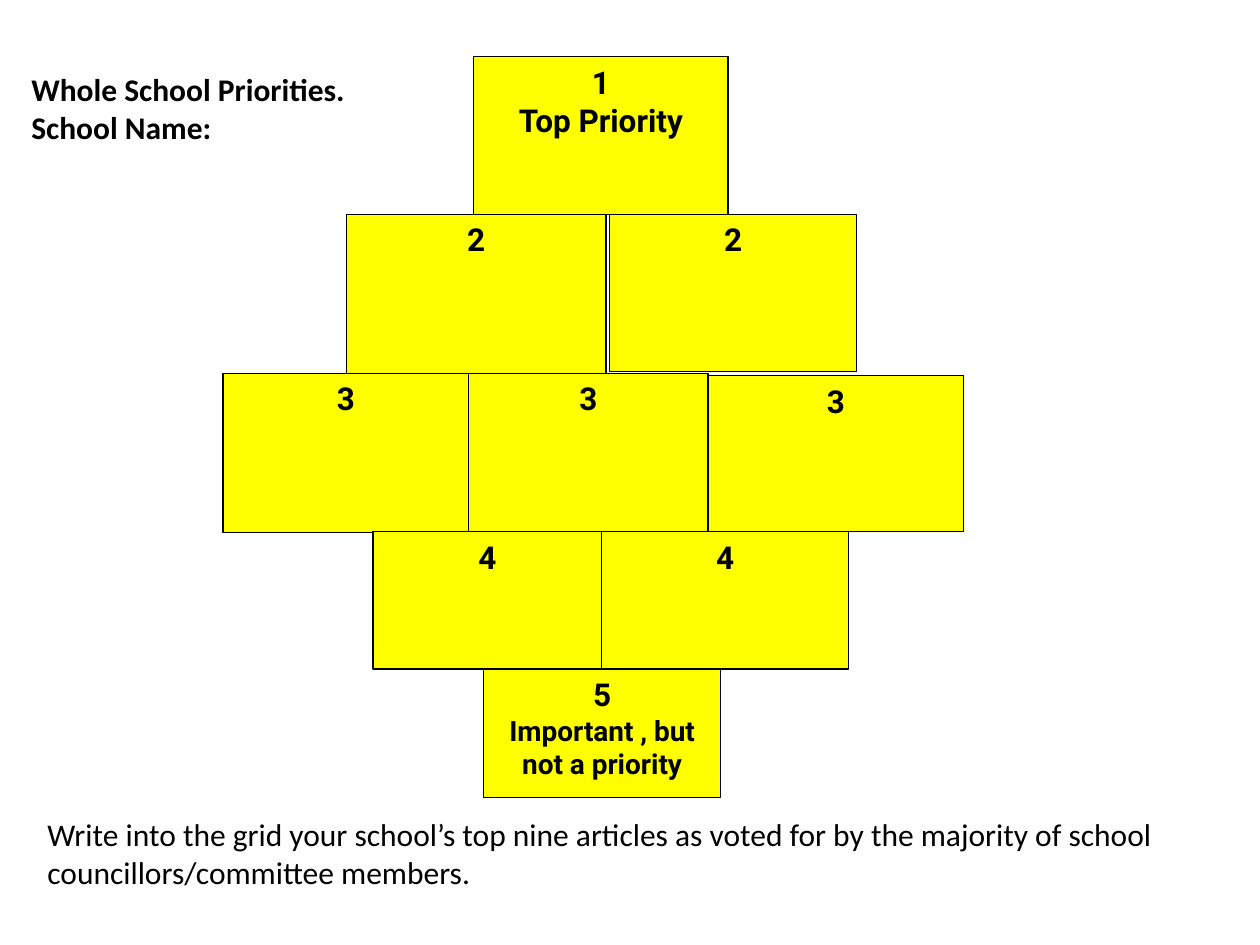
from dataclasses import dataclass

from pptx import Presentation
from pptx.dml.color import RGBColor
from pptx.enum import shapes, text
from pptx.util import Pt


@dataclass(frozen=True)
class Theme:
    ink: RGBColor = RGBColor(0, 0, 0)
    card: RGBColor = RGBColor(255, 255, 0)
    body_font: str = "Calibri"
    card_font: str = "Roboto"
    size: float = 18
    caption_size: float = 16
    outline: float = 0.75


THEME = Theme()

# Each rank: number, caption, caption size, cards as (left, top, width, height)
# measured from the corner of the diamond
RANKS = [
    ("1", "Top Priority", THEME.size, [(143.3, 0, 145.4, 90)]),
    ("2", None, None, [(70.6, 90, 148.3, 92.2), (221, 90, 141.1, 90)]),
    ("3", None, None, [(0, 180.9, 140.4, 91.2), (140.4, 180.9, 136.8, 90.5),
                       (277.2, 182.3, 146.2, 89.1)]),
    ("4", None, None, [(85.7, 271.4, 130.7, 78.5), (216.4, 271.4, 141.1, 78.5)]),
    ("5", "Important , but not a priority", THEME.caption_size,
     [(149, 349.9, 135.4, 73.4)]),
]


def write_lines(frame, lines, align, **font_format):
    """Write (wording, size) lines, one paragraph each."""
    for index, (wording, size) in enumerate(lines):
        paragraph = frame.paragraphs[0] if index == 0 else frame.add_paragraph()
        paragraph.alignment = align
        run = paragraph.add_run()
        run.text = wording
        run.font.color.rgb = THEME.ink
        for key, value in {"size": Pt(size), **font_format}.items():
            setattr(run.font, key, value)


def add_card(slide, box, lines):
    card = slide.shapes.add_shape(shapes.MSO_SHAPE.RECTANGLE, *map(Pt, box))
    card.shadow.inherit = False
    card.fill.solid()
    card.fill.fore_color.rgb = THEME.card
    card.line.color.rgb = THEME.ink
    card.line.width = Pt(THEME.outline)
    card.text_frame.word_wrap = True
    card.text_frame.vertical_anchor = text.MSO_ANCHOR.TOP
    write_lines(card.text_frame, lines, text.PP_ALIGN.CENTER,
                name=THEME.card_font, bold=True)


def add_diamond(slide, left, top):
    """Nine priority cards, ranked from top to bottom."""
    for number, caption, caption_size, cards in RANKS:
        lines = [(number, THEME.size)]
        if caption:
            lines.append((caption, caption_size))
        for x, y, width, height in cards:
            add_card(slide, (left + x, top + y, width, height), lines)


def add_note(slide, box, lines, wrap, bold):
    note = slide.shapes.add_textbox(*map(Pt, box)).text_frame
    note.word_wrap = wrap
    note.auto_size = text.MSO_AUTO_SIZE.SHAPE_TO_FIT_TEXT
    write_lines(note, [(line, THEME.size) for line in lines],
                text.PP_ALIGN.LEFT, name=THEME.body_font, bold=bold)


def main():
    deck = Presentation()
    deck.slide_width, deck.slide_height = Pt(720), Pt(540)
    slide = deck.slides.add_slide(deck.slide_layouts[6])

    # Ranking grid
    add_diamond(slide, 127.4, 32.4)

    # Heading
    add_note(slide, (10.8, 36.7, 195, 51),
             ["Whole School Priorities.", "School Name:"], wrap=False, bold=True)

    # Instruction
    add_note(slide, (20, 462.2, 676, 51),
             ["Write into the grid your school’s top nine articles as voted for "
              "by the majority of school councillors/committee members."],
             wrap=True, bold=False)

    deck.save("out.pptx")


if __name__ == "__main__":
    main()
